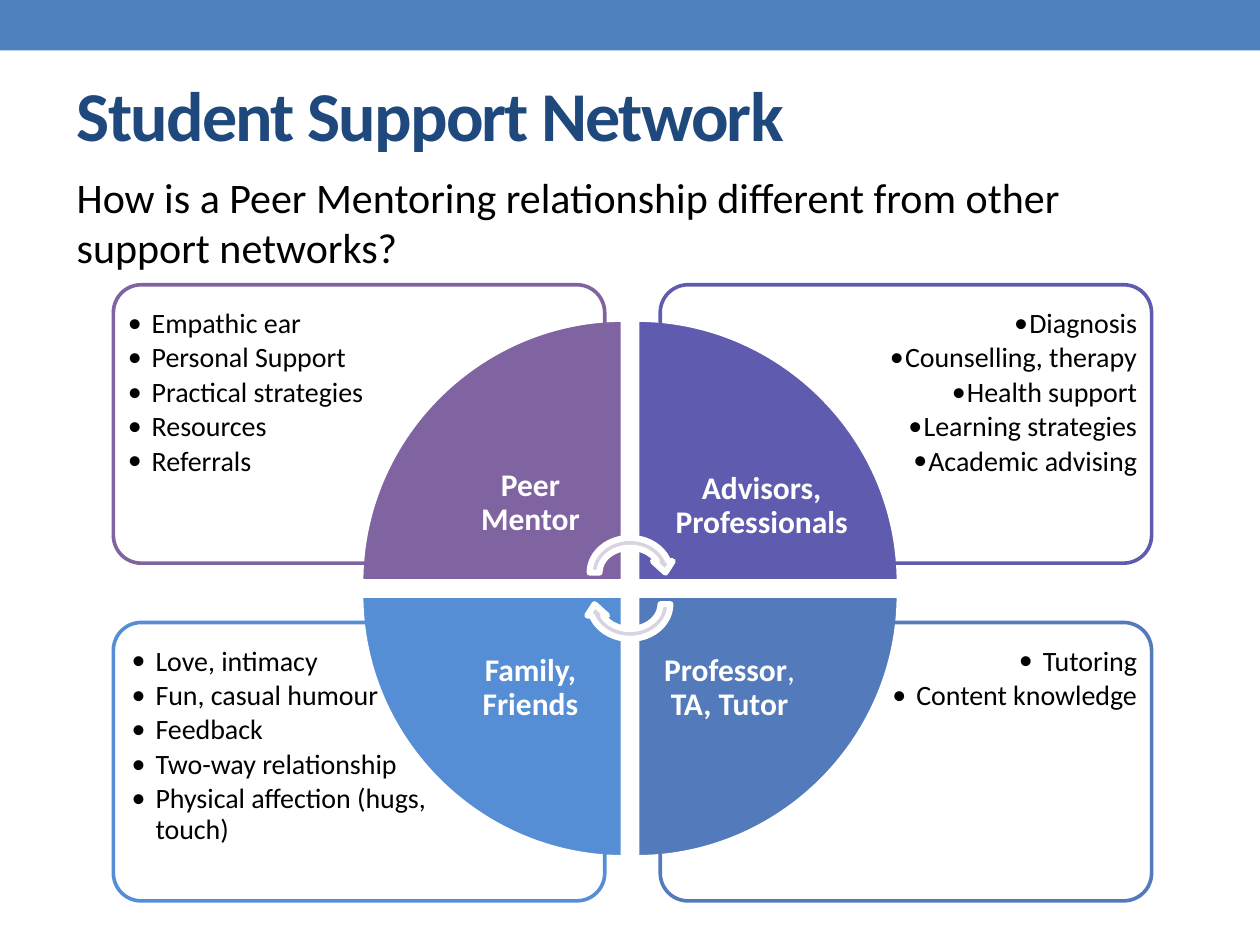
import lxml.etree
import pptx
import pptx.dml.color
import pptx.enum.shapes
import pptx.enum.text
import pptx.oxml.ns
import pptx.util
from dataclasses import dataclass

Inches = pptx.util.Inches
Shapes = pptx.enum.shapes.MSO_SHAPE
Align = pptx.enum.text.PP_ALIGN
Anchor = pptx.enum.text.MSO_ANCHOR
qualified = pptx.oxml.ns.qn


@dataclass(frozen=True)
class Theme:
    font: str = "Calibri"
    bar: str = "4F81BD"
    title: str = "1F497D"
    ink: str = "000000"
    white: str = "FFFFFF"
    arrow: str = "D8D3E0"
    title_size: int = 40
    question_size: int = 24
    label_size: int = 18
    list_size: int = 16
    box_line: float = 2.08
    white_line: float = 3.5


THEME = Theme()
TITLE = "Student Support Network"
QUESTION = "How is a Peer Mentoring relationship different from other support networks?"
SUPPORTS = [
    dict(column=0, row=0, color="8064A2", label=[("Peer Mentor", True)],
         label_insets=(0.75, 0.98, 0.14, 0.14), list_insets=(0.05, 0.13, 1.22, 0.6),
         indent=(0.19, -0.19),
         items=["Empathic ear", "Personal Support", "Practical strategies",
                "Resources", "Referrals"]),
    dict(column=1, row=0, color="5F5BAE", label=[("Advisors, Professionals", True)],
         label_insets=(0.14, 1.02, 0.24, 0.14), list_insets=(1.22, 0.13, 0.05, 0.6),
         indent=(0.5, -0.12),
         items=["Diagnosis", "Counselling, therapy", "Health support",
                "Learning strategies", "Academic advising"]),
    dict(column=1, row=1, color="537ABA",
         label=[("Professor", True), (", ", False), ("TA, Tutor", True)],
         label_insets=(0.14, 0.14, 0.75, 0.75), list_insets=(1.22, 0.13, 0.05, 0.05),
         indent=(0.19, -0.19), items=["Tutoring", "Content knowledge"]),
    dict(column=0, row=1, color="558ED5", label=[("Family, Friends", True)],
         label_insets=(0.75, 0.14, 0.14, 0.75), list_insets=(0.08, 0.13, 1.15, 0),
         indent=(0.19, -0.19),
         items=["Love, intimacy", "Fun, casual humour", "Feedback",
                "Two-way relationship", "Physical affection (hugs, touch)"]),
]

WIDTH, HEIGHT = 10, 7.5
BOX_LEFTS, BOX_TOPS = (0.9, 5.24), (2.26, 4.94)
BOX_WIDTH, BOX_HEIGHT, BOX_CORNER = 3.9, 2.21, 0.1
CENTER_X, CENTER_Y = WIDTH / 2, 4.67
HALF_GAP, RADIUS, ARC_HANDLE = 0.05, 2.09, 0.55
ARROW_WIDTH, ARROW_HEIGHT, ARROW_SHIFT = 0.72, 0.63, 0.125


def rgb(color):
    return pptx.dml.color.RGBColor.from_string(color)


def style(shape, fill=None, line=None, width=0):
    shape.shadow.inherit = False
    if fill:
        shape.fill.solid()
        shape.fill.fore_color.rgb = rgb(fill)
    else:
        shape.fill.background()
    if line:
        shape.line.color.rgb = rgb(line)
        shape.line.width = pptx.util.Pt(width)
    else:
        shape.line.fill.background()


def add_bullet(para, indent):
    para.level = 1
    properties = para._p.get_or_add_pPr()
    margin, hanging = indent
    properties.set("marL", str(Inches(margin)))
    properties.set("indent", str(Inches(hanging)))
    for tag, key, value in (("a:buFont", "typeface", THEME.font), ("a:buChar", "char", "•")):
        lxml.etree.SubElement(properties, qualified(tag)).set(key, value)


def write(shape, paragraphs, *, size, color, align=Align.LEFT, anchor=Anchor.TOP,
          insets=(0.1, 0.05, 0.1, 0.05), leading=1.0, after=0, indent=None, tracking=None):
    frame = shape.text_frame
    frame.word_wrap = True
    frame.vertical_anchor = anchor
    (frame.margin_left, frame.margin_top,
     frame.margin_right, frame.margin_bottom) = map(Inches, insets)
    for index, pieces in enumerate(paragraphs):
        para = frame.add_paragraph() if index else frame.paragraphs[0]
        para.alignment = align
        para.line_spacing = leading
        para.space_before = pptx.util.Pt(0)
        para.space_after = pptx.util.Pt(after)
        if indent:
            add_bullet(para, indent)
        for text, bold in pieces:
            span = para.add_run()
            span.text = text
            span.font.name = THEME.font
            span.font.size = pptx.util.Pt(size)
            span.font.bold = bold
            span.font.color.rgb = rgb(color)
            if tracking is not None:
                span._r.get_or_add_rPr().set("spc", str(int(tracking * 100)))


def add_list_box(page, support):
    box = page.shapes.add_shape(
        Shapes.ROUNDED_RECTANGLE, Inches(BOX_LEFTS[support["column"]]),
        Inches(BOX_TOPS[support["row"]]), Inches(BOX_WIDTH), Inches(BOX_HEIGHT))
    box.adjustments[0] = BOX_CORNER
    style(box, line=support["color"], width=THEME.box_line)
    write(box, [[(item, False)] for item in support["items"]],
          size=THEME.list_size, color=THEME.ink, insets=support["list_insets"],
          align=Align.RIGHT if support["column"] else Align.LEFT,
          leading=0.9, after=2.4, indent=support["indent"])


def curve_first_side(shape, points):
    line = shape._element.find(".//" + qualified("a:lnTo"))
    curve = lxml.etree.Element(qualified("a:cubicBezTo"))
    for x, y in points:
        point = lxml.etree.SubElement(curve, qualified("a:pt"))
        point.set("x", str(x - shape.left))
        point.set("y", str(y - shape.top))
    line.getparent().replace(line, curve)


def add_quarter(page, support):
    across, down = 2 * support["column"] - 1, 2 * support["row"] - 1

    def place(x_share, y_share):
        return (Inches(CENTER_X + across * (HALF_GAP + RADIUS * x_share)),
                Inches(CENTER_Y + down * (HALF_GAP + RADIUS * y_share)))

    start, end, corner = place(1, 0), place(0, 1), place(0, 0)
    builder = page.shapes.build_freeform(*start)
    builder.add_line_segments([end, corner], close=True)
    quarter = builder.convert_to_shape()
    curve_first_side(quarter, [place(1, ARC_HANDLE), place(ARC_HANDLE, 1), end])
    style(quarter, support["color"], THEME.white, THEME.white_line)
    write(quarter, [support["label"]], size=THEME.label_size, color=THEME.white,
          align=Align.CENTER, anchor=Anchor.MIDDLE, insets=support["label_insets"],
          leading=0.9)


def main():
    deck = pptx.Presentation()
    deck.slide_width, deck.slide_height = Inches(WIDTH), Inches(HEIGHT)
    page = deck.slides.add_slide(deck.slide_layouts[5])

    bar = page.shapes.add_shape(Shapes.RECTANGLE, 0, 0, Inches(WIDTH), Inches(0.4))
    style(bar, THEME.bar)

    title = page.shapes.title
    title.left, title.top, title.width, title.height = map(Inches, (0.51, 0.36, 9, 1.08))
    write(title, [[(TITLE, True)]], size=THEME.title_size, color=THEME.title,
          anchor=Anchor.MIDDLE, tracking=-1)

    question = page.shapes.add_textbox(*map(Inches, (0.51, 1.31, 8.58, 0.91)))
    write(question, [[(QUESTION, False)]], size=THEME.question_size, color=THEME.ink)

    for support in SUPPORTS:
        add_quarter(page, support)
        add_list_box(page, support)

    for direction, rotation in ((-1, 0), (1, 180)):
        middle = CENTER_Y + direction * ARROW_SHIFT
        arrow = page.shapes.add_shape(
            Shapes.CIRCULAR_ARROW, Inches(CENTER_X - ARROW_WIDTH / 2),
            Inches(middle - ARROW_HEIGHT / 2), Inches(ARROW_WIDTH), Inches(ARROW_HEIGHT))
        arrow.rotation = rotation
        style(arrow, THEME.arrow, THEME.white, THEME.white_line)

    deck.save("out.pptx")


if __name__ == "__main__":
    main()
